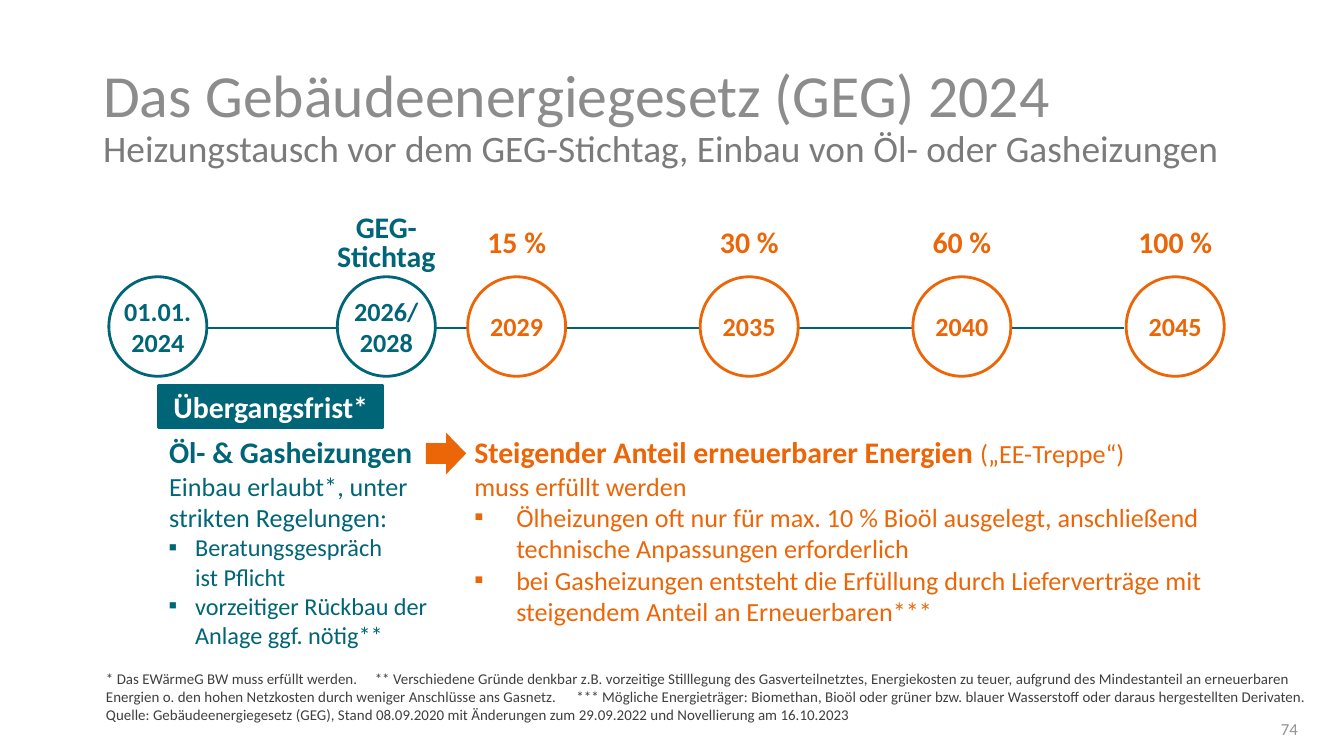
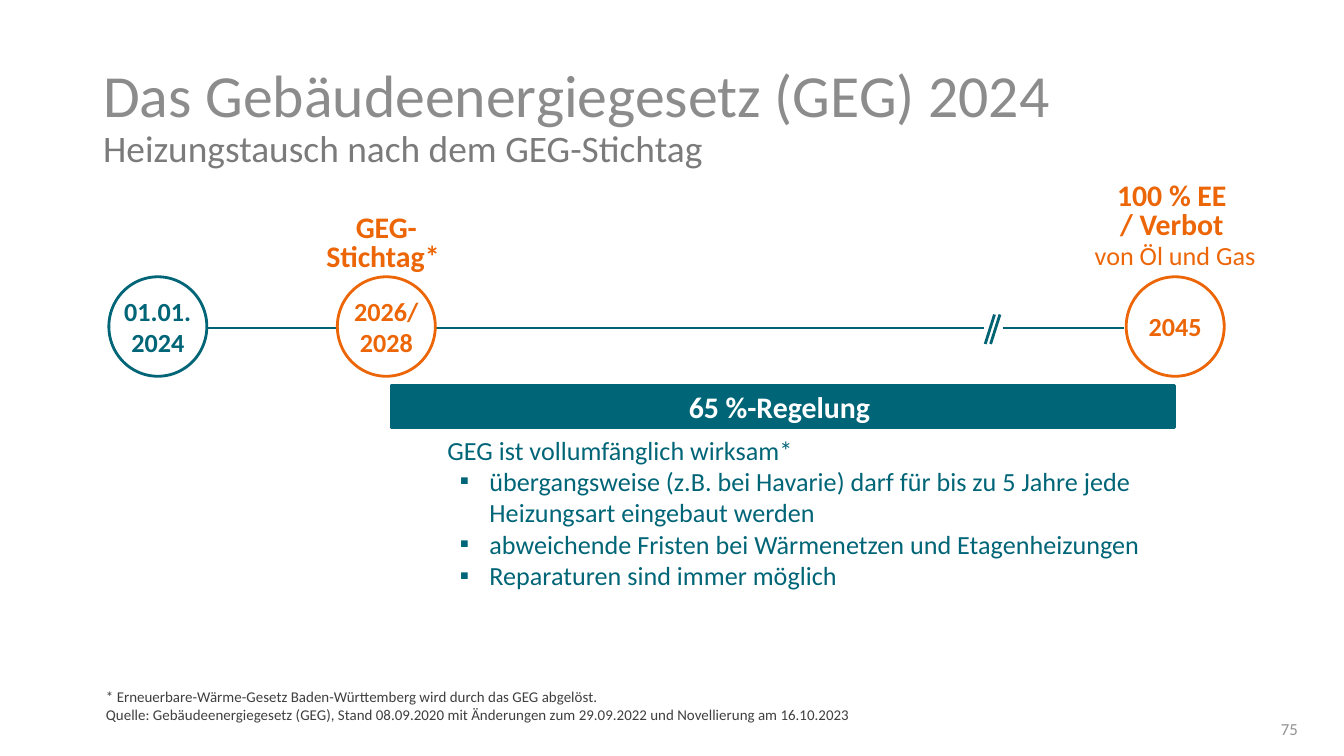
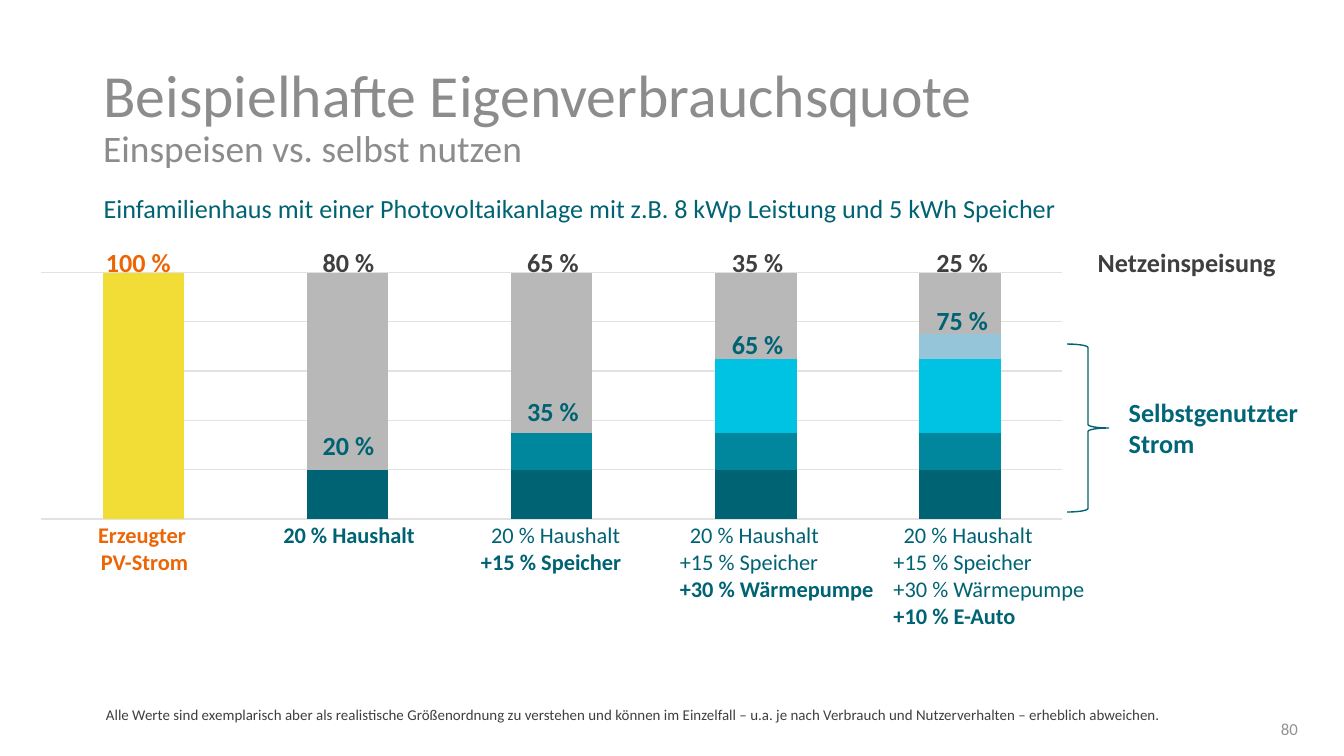
import copy
from dataclasses import dataclass
from typing import Any, Optional, Sequence, Union

import lxml.etree
import pptx
import pptx.chart.data
import pptx.dml.color
import pptx.enum.chart
import pptx.enum.shapes
import pptx.enum.text
import pptx.oxml.ns
import pptx.util

Pt = pptx.util.Pt
qn = pptx.oxml.ns.qn
Align = pptx.enum.text.PP_ALIGN
Anchor = pptx.enum.text.MSO_ANCHOR
Preset = pptx.enum.shapes.MSO_SHAPE


# Theme
@dataclass(frozen=True)
class Theme:
    font: str = "Calibri"
    chart_font: str = "Open Sans"
    teal: str = "006577"
    deep_teal: str = "006373"
    mid_teal: str = "00879E"
    cyan: str = "00C2E2"
    pale_blue: str = "95C5D9"
    orange: str = "EC6607"
    yellow: str = "F2DC36"
    white: str = "FFFFFF"
    text: str = "3F3F3F"
    title: str = "8C8C8C"
    subtitle: str = "7B7B7B"
    page: str = "929292"
    feed_in: str = "B8B8B8"
    grid: str = "E2E2E2"
    title_size: float = 32
    subtitle_size: float = 20
    heading_size: float = 16
    body_size: float = 14
    small_size: float = 13
    caption_size: float = 12
    chart_size: float = 10
    page_size: float = 9
    note_size: float = 8


THEME = Theme()


# Descriptions of repeated elements
@dataclass(frozen=True)
class Box:
    left: float
    top: float
    width: float
    height: float

    def lengths(self) -> list[int]:
        return [Pt(value) for value in (self.left, self.top, self.width, self.height)]


@dataclass(frozen=True)
class Span:
    text: str
    color: str
    size: float = THEME.body_size
    bold: bool = False


@dataclass(frozen=True)
class Line:
    spans: Sequence[Span]
    margin: float = 0
    indent: float = 0
    bullet: bool = False
    spacing: Union[float, int, None] = None
    tabs: Sequence[float] = ()


@dataclass(frozen=True)
class Milestone:
    center: float
    date: str
    color: str
    label: Sequence[Span] = ()
    label_width: float = 61.2
    label_top: float = 117.4
    label_height: float = 27.4


@dataclass(frozen=True)
class ValueLabel:
    column: int
    text: str
    color: str
    top: float = 128.2
    alignment: Align = Align.CENTER


@dataclass(frozen=True)
class Caption:
    left: float
    width: float
    lines: Sequence[str]


@dataclass(frozen=True)
class Series:
    name: str
    values: Sequence[float]
    colors: Sequence[str]


STANDARD_INSETS = (7.2, 3.6, 7.2, 3.6)
NARROW_INSETS = (2.9, 3.6, 2.9, 3.6)
NO_INSETS = (0, 0, 0, 0)


# Drawing functions
def rgb(color: str) -> pptx.dml.color.RGBColor:
    return pptx.dml.color.RGBColor.from_string(color)


def heading(text: str, color: str) -> Span:
    return Span(text, color, THEME.heading_size, True)


def write_line(paragraph: Any, line: Line, alignment: Align) -> None:
    paragraph.alignment = alignment
    if line.spacing is not None:
        paragraph.line_spacing = line.spacing
    properties = paragraph._p.get_or_add_pPr()
    properties.set("marL", str(Pt(line.margin)))
    properties.set("indent", str(Pt(line.indent)))
    if line.bullet:
        lxml.etree.SubElement(properties, qn("a:buFont"), typeface=THEME.font)
        lxml.etree.SubElement(properties, qn("a:buChar"), char="▪")
    if line.tabs:
        tab_list = lxml.etree.SubElement(properties, qn("a:tabLst"))
        for position in line.tabs:
            lxml.etree.SubElement(tab_list, qn("a:tab"), pos=str(Pt(position)), algn="l")
    for span in line.spans:
        for index, piece in enumerate(span.text.split("\n")):
            if index:
                # A line break takes the format of the run before it
                previous = paragraph.runs[-1].font._element
                paragraph.add_line_break()
                paragraph._p.findall(qn("a:br"))[-1].append(copy.deepcopy(previous))
            if piece:
                run = paragraph.add_run()
                run.text = piece
                run.font.name = THEME.font
                run.font.size = Pt(span.size)
                run.font.bold = span.bold
                run.font.color.rgb = rgb(span.color)


def write(shape: Any, lines: Sequence[Line], alignment: Align = Align.LEFT,
          anchor: Anchor = Anchor.TOP, insets: Sequence[float] = STANDARD_INSETS,
          wrap: bool = True) -> None:
    frame = shape.text_frame
    frame.word_wrap = wrap
    frame.vertical_anchor = anchor
    (frame.margin_left, frame.margin_top,
     frame.margin_right, frame.margin_bottom) = (Pt(inset) for inset in insets)
    for index, line in enumerate(lines):
        write_line(frame.add_paragraph() if index else frame.paragraphs[0], line, alignment)


def add_text(slide: Any, box: Box, lines: Sequence[Line], **options: Any) -> None:
    write(slide.shapes.add_textbox(*box.lengths()), lines, **options)


def add_preset(slide: Any, preset: Preset, box: Box, fill: Optional[str] = None,
               outline: Optional[str] = None, weight: float = 1.5) -> Any:
    shape = slide.shapes.add_shape(preset, *box.lengths())
    shape.shadow.inherit = False
    if fill:
        shape.fill.solid()
        shape.fill.fore_color.rgb = rgb(fill)
    else:
        shape.fill.background()
    if outline:
        shape.line.color.rgb = rgb(outline)
        shape.line.width = Pt(weight)
    else:
        shape.line.fill.background()
    return shape


def add_line(slide: Any, x1: float, y1: float, x2: float, y2: float) -> None:
    connector = slide.shapes.add_connector(
        pptx.enum.shapes.MSO_CONNECTOR.STRAIGHT, Pt(x1), Pt(y1), Pt(x2), Pt(y2))
    connector.line.color.rgb = rgb(THEME.deep_teal)
    connector.line.width = Pt(1.5)
    lxml.etree.SubElement(connector.element.spPr, qn("a:effectLst"))


def add_slide(presentation: Any, number: int, title: str, subtitle: str,
              subtitle_color: str = THEME.subtitle) -> Any:
    slide = presentation.slides.add_slide(presentation.slide_layouts[6])
    add_text(slide, Box(680, 380.9, 21.6, 19.4),
             [Line([Span(str(number), THEME.page, THEME.page_size)])],
             alignment=Align.CENTER, anchor=Anchor.MIDDLE, insets=NO_INSETS)
    add_text(slide, Box(48.2, 31.7, 620.6, 38.2), [Line([
        Span(title + "\n", THEME.title, THEME.title_size),
        Span(subtitle, subtitle_color, THEME.subtitle_size)], spacing=0.9)])
    return slide


def add_footnote(slide: Any, text: str, width: float, height: float,
                 tabs: Sequence[float] = ()) -> None:
    bottom = 391
    add_text(slide, Box(48.2, bottom - height, width, height),
             [Line([Span(text, THEME.text, THEME.note_size)], tabs=tabs)],
             anchor=Anchor.BOTTOM, insets=(8.6, 3.6, 7.2, 3.6))


def add_timeline(slide: Any, milestones: Sequence[Milestone]) -> None:
    axis = 175.7
    for start, end in ((97.9, 527), (537.1, 601.9)):
        add_line(slide, start, axis, end, axis)
    width, height = 52.5, 53.3
    for milestone in milestones:
        circle = add_preset(
            slide, Preset.OVAL, Box(milestone.center - width / 2, 148.3, width, height),
            THEME.white, milestone.color)
        write(circle, [Line([Span(milestone.date, milestone.color, bold=True)])],
              Align.CENTER, Anchor.MIDDLE, NARROW_INSETS, wrap=False)
        if milestone.label:
            add_text(slide, Box(milestone.center - milestone.label_width / 2,
                                milestone.label_top, milestone.label_width,
                                milestone.label_height),
                     [Line(milestone.label, spacing=Pt(15.6))],
                     alignment=Align.CENTER, anchor=Anchor.MIDDLE, insets=NO_INSETS)


def add_period(slide: Any, text: str, left: float, width: float) -> None:
    bar = add_preset(slide, Preset.RECTANGLE, Box(left, 206.6, width, 22.4),
                     THEME.teal, THEME.teal)
    write(bar, [Line([heading(text, THEME.white)])],
          Align.CENTER, Anchor.MIDDLE, NARROW_INSETS)


# Shared content
GEG_TITLE = "Das Gebäudeenergiegesetz (GEG) 2024"
GEG_SOURCE = ("Quelle: Gebäudeenergiegesetz (GEG), Stand 08.09.2020 mit Änderungen "
              "zum 29.09.2022 und Novellierung am 16.10.2023")
START = Milestone(84.6, "01.01.\n2024", THEME.teal)


def deadline(color: str, text: str) -> Milestone:
    return Milestone(207, "2026/\n2028", color, [heading(text, color)], 112.3)


# Slide 1: replacement before the deadline
def build_before_deadline(presentation: Any) -> None:
    slide = add_slide(presentation, 74, GEG_TITLE,
                      "Heizungstausch vor dem GEG-Stichtag, Einbau von Öl- oder Gasheizungen")
    steps = ((276.8, "2029", "15 %"), (401.4, "2035", "30 %"),
             (515.3, "2040", "60 %"), (629.6, "2045", "100 %"))
    add_timeline(slide, [START, deadline(THEME.teal, "GEG-\nStichtag")] + [
        Milestone(center, year, THEME.orange, [heading(share, THEME.orange)])
        for center, year, share in steps])
    add_period(slide, "Übergangsfrist*", 85, 120.2)

    bullets = ("Beratungsgespräch \nist Pflicht",
               "vorzeitiger Rückbau der Anlage ggf. nötig**")
    add_text(slide, Box(76.3, 229, 169.9, 128.9), [
        Line([heading("Öl- & Gasheizungen ", THEME.teal),
              Span("Einbau erlaubt*, unter strikten Regelungen:", THEME.teal)], margin=7.2),
        *(Line([Span(text, THEME.teal, THEME.small_size)], 21.2, -14.2, True)
          for text in bullets)])

    add_preset(slide, Preset.RIGHT_ARROW, Box(228.2, 231.8, 21.6, 22.3), THEME.orange)
    bullets = ("Ölheizungen oft nur für max. 10 % Bioöl ausgelegt, anschließend "
               "technische Anpassungen erforderlich",
               "bei Gasheizungen entsteht die Erfüllung durch Lieferverträge mit "
               "steigendem Anteil an Erneuerbaren***")
    add_text(slide, Box(247, 229, 427, 128.2), [
        Line([heading("Steigender Anteil erneuerbarer Energien ", THEME.orange),
              Span("(„EE-Treppe“) \nmuss erfüllt werden", THEME.orange)]),
        *(Line([Span(text, THEME.orange)], 22.5, -22.5, True) for text in bullets)])

    add_footnote(
        slide,
        "* Das EWärmeG BW muss erfüllt werden.\t** Verschiedene Gründe denkbar z.B. "
        "vorzeitige Stilllegung des Gasverteilnetztes, Energiekosten zu teuer, aufgrund "
        "des Mindestanteil an erneuerbaren Energien o. den hohen Netzkosten durch weniger "
        "Anschlüsse ans Gasnetz.\t*** Mögliche Energieträger: Biomethan, Bioöl oder "
        "grüner bzw. blauer Wasserstoff oder daraus hergestellten Derivaten. \n" + GEG_SOURCE,
        663.8, 36.7, tabs=(136, 242))


# Slide 2: replacement after the deadline
def build_after_deadline(presentation: Any) -> None:
    slide = add_slide(presentation, 75, GEG_TITLE, "Heizungstausch nach dem GEG-Stichtag")
    ban = [heading("100 % EE \n/ Verbot \n", THEME.orange),
           Span("von Öl und Gas", THEME.orange)]
    add_timeline(slide, [
        START, deadline(THEME.orange, "GEG-\nStichtag* "),
        Milestone(629.6, "2045", THEME.orange, ban, 115.2, 95, 53.3)])
    for offset in (0, 2.9):
        add_line(slide, 532.8 + offset, 168.5, 527.8 + offset, 184.3)
    add_period(slide, "65 %-Regelung ", 209.5, 419.8)

    bullets = ("übergangsweise (z.B. bei Havarie) darf für bis zu 5 Jahre jede "
               "Heizungsart eingebaut werden",
               "abweichende Fristen bei Wärmenetzen und Etagenheizungen",
               "Reparaturen sind immer möglich")
    add_text(slide, Box(232.6, 229, 396.7, 92.2), [
        Line([Span("GEG ist vollumfänglich wirksam*", THEME.teal)]),
        *(Line([Span(text, THEME.teal)], 22.5, -15.8, True) for text in bullets)])
    add_footnote(
        slide, "* Erneuerbare-Wärme-Gesetz Baden-Württemberg wird durch das GEG abgelöst. \n"
        + GEG_SOURCE, 511.2, 26.6)


# Slide 3: self-consumption
def add_consumption_chart(slide: Any, box: Box) -> None:
    teal, gray = THEME.deep_teal, THEME.feed_in
    series_list = (
        Series("Series 1", (100, 20, 20, 20, 20), (THEME.yellow, teal, teal, teal, teal)),
        Series("Series 2", (0, 80, 15, 15, 15),
               (THEME.subtitle, gray) + (THEME.mid_teal,) * 3),
        Series("Series 3", (0, 0, 0, 30, 30), (THEME.cyan,) * 5),
        Series("Series 4", (0, 0, 0, 0, 10), (THEME.pale_blue,) * 5),
        Series("Series 5", (0, 0, 65, 35, 25), (gray,) * 5))
    data = pptx.chart.data.CategoryChartData()
    data.categories = [str(number) for number in range(1, 6)]
    for series in series_list:
        data.add_series(series.name, series.values)
    chart = slide.shapes.add_chart(
        pptx.enum.chart.XL_CHART_TYPE.COLUMN_STACKED_100, *box.lengths(), data).chart
    chart.has_legend = False
    chart.has_title = False
    chart.font.name = THEME.chart_font
    chart.font.size = Pt(THEME.chart_size)
    chart.font.color.rgb = rgb(THEME.text)

    plot = chart.plots[0]
    plot.gap_width = 150
    plot.overlap = 100
    plot.vary_by_categories = False
    for drawn, series in zip(plot.series, series_list):
        base = series.colors[0] if series.name != "Series 1" else teal
        drawn.format.fill.solid()
        drawn.format.fill.fore_color.rgb = rgb(base)
        for index, color in enumerate(series.colors):
            if color != base:
                fill = drawn.points[index].format.fill
                fill.solid()
                fill.fore_color.rgb = rgb(color)

    chart.category_axis.visible = False
    axis = chart.value_axis
    axis.visible = False
    axis.minimum_scale, axis.maximum_scale, axis.major_unit = 0, 1, 0.2
    axis.has_major_gridlines = True
    axis.major_gridlines.format.line.color.rgb = rgb(THEME.grid)
    axis.major_gridlines.format.line.width = Pt(0.75)

    # Fixed plot area, as fractions of the chart
    area = chart.element.find(".//" + qn("c:plotArea"))
    for old_layout in area.findall(qn("c:layout")):
        area.remove(old_layout)
    layout = lxml.etree.Element(qn("c:layout"))
    area.insert(0, layout)
    manual = lxml.etree.SubElement(layout, qn("c:manualLayout"))
    for tag, value in (("layoutTarget", "inner"), ("xMode", "edge"), ("yMode", "edge"),
                       ("x", "0.02"), ("y", "0.02"), ("w", "0.96"), ("h", "0.96")):
        lxml.etree.SubElement(manual, qn("c:" + tag), val=value)


def build_self_consumption(presentation: Any) -> None:
    slide = add_slide(presentation, 80, "Beispielhafte Eigenverbrauchsquote",
                      "Einspeisen vs. selbst nutzen", THEME.title)
    add_text(slide, Box(49.7, 99.4, 609.1, 24.5), [Line([Span(
        "Einfamilienhaus mit einer Photovoltaikanlage mit z.B. 8 kWp Leistung "
        "und 5 kWh Speicher", THEME.deep_teal)])], insets=(5.8, 3.6, 5.8, 3.6))
    add_consumption_chart(slide, Box(10.8, 143.3, 569.5, 137.5))

    # Values above and inside the columns
    labels = [ValueLabel(0, "100 %", THEME.orange, alignment=Align.LEFT)]
    shares = (("80 %", "20 %", 226.1), ("65 %", "35 %", 208.1),
              ("35 %", "65 %", 172.1), ("25 %", "75 %", 159.1))
    for column, (feed_in, own_use, own_top) in enumerate(shares, start=1):
        labels.append(ValueLabel(column, feed_in, THEME.text))
        labels.append(ValueLabel(column, own_use, THEME.deep_teal, own_top))
    for label in labels:
        add_text(slide, Box(49.7 + 109.6 * label.column, label.top, 54.7, 24.5),
                 [Line([Span(label.text, label.color, bold=True)])],
                 alignment=label.alignment, anchor=Anchor.MIDDLE)

    # Captions below the columns: the newest consumer is bold
    caption_top = 275.8
    add_text(slide, Box(36, caption_top, 82.8, 36), [Line([Span(
        "Erzeugter \nPV-Strom", THEME.orange, THEME.caption_size, True)])],
        alignment=Align.CENTER)
    consumers = ("20 % Haushalt", "+15 % Speicher", "+30 % Wärmepumpe", "+10 % E-Auto")
    places = ((144.7, 98.6), (250.6, 98.6), (357.1, 136.8), (471.6, 131.8))
    for count, (left, width) in enumerate(places, start=1):
        caption = Caption(left, width, consumers[:count])
        last = count - 1
        add_text(slide, Box(caption.left, caption_top, caption.width, 7 + 14.6 * count), [
            Line([Span(text, THEME.deep_teal, THEME.caption_size, index == last)],
                 indent=5.4 if index == 0 and last else 0)
            for index, text in enumerate(caption.lines)])

    # Legend on the right
    add_text(slide, Box(581, 128.2, 118.1, 24.5),
             [Line([Span("Netzeinspeisung", THEME.text, bold=True)])])
    add_text(slide, Box(597.6, 208.8, 122.4, 41),
             [Line([Span("Selbstgenutzter \nStrom", THEME.teal, bold=True)])])
    add_preset(slide, Preset.RIGHT_BRACE, Box(571.7, 184.3, 22.3, 90),
               outline=THEME.deep_teal, weight=0.75)
    add_footnote(
        slide, "Alle Werte sind exemplarisch aber als realistische Größenordnung zu "
        "verstehen und können im Einzelfall – u.a. je nach Verbrauch und "
        "Nutzerverhalten – erheblich abweichen.", 612, 17.3)

    # White field that ends the inner grid lines at the first column
    add_preset(slide, Preset.RECTANGLE, Box(0, 150.5, 54.7, 125.3),
               THEME.white, THEME.white, 1)


def main() -> None:
    presentation = pptx.Presentation()
    presentation.slide_width = Pt(720)
    presentation.slide_height = Pt(405)
    build_before_deadline(presentation)
    build_after_deadline(presentation)
    build_self_consumption(presentation)
    presentation.save("out.pptx")


if __name__ == "__main__":
    main()
